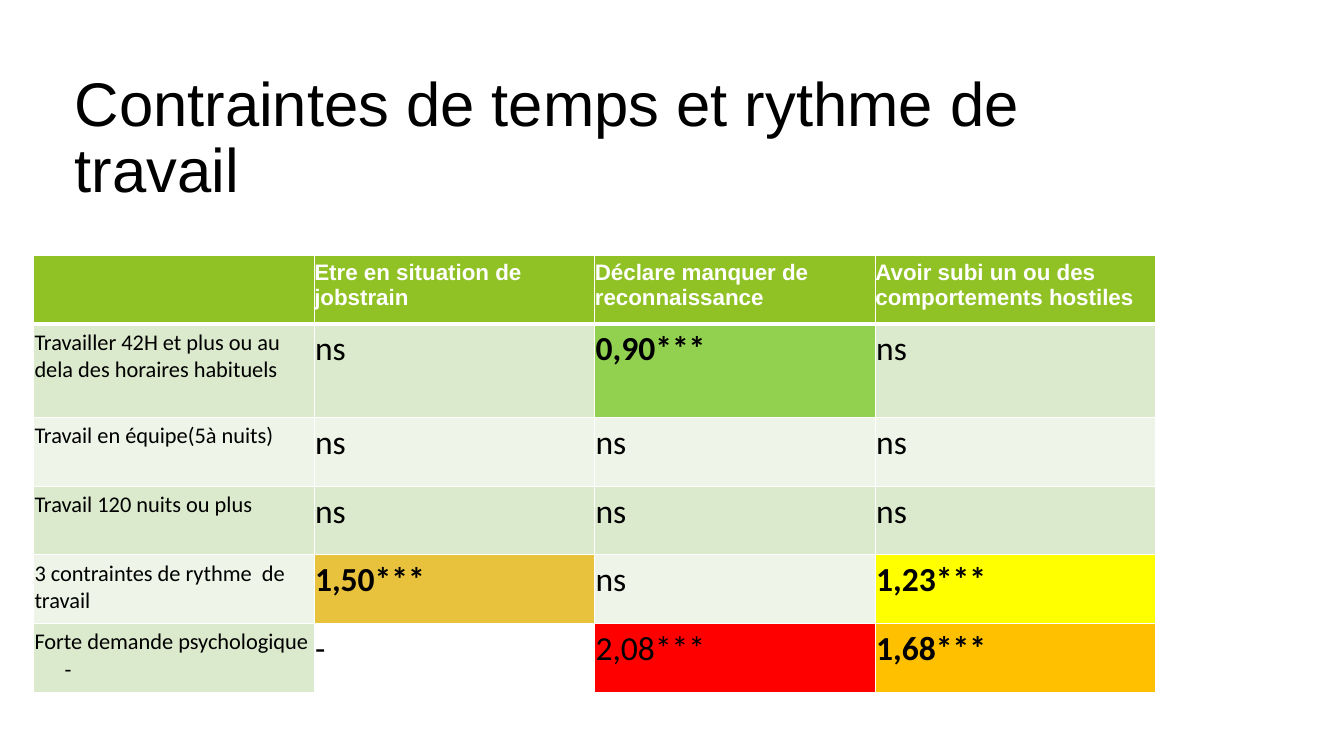
from lxml.etree import SubElement
from pptx import Presentation
from pptx.dml.color import RGBColor
from pptx.enum.text import MSO_ANCHOR
from pptx.oxml import parse_xml
from pptx.oxml.ns import nsdecls, qn
from pptx.util import Cm, Pt

BLACK = RGBColor(0x00, 0x00, 0x00)
WHITE = RGBColor(0xFF, 0xFF, 0xFF)
HEADER_GREEN = RGBColor(0x90, 0xC2, 0x26)
BAND_DARK = RGBColor(0xDB, 0xE9, 0xCC)
BAND_LIGHT = RGBColor(0xEE, 0xF4, 0xE7)
GREEN = RGBColor(0x92, 0xD0, 0x50)
GOLD = RGBColor(0xE6, 0xB9, 0x1E)
YELLOW = RGBColor(0xFF, 0xFF, 0x00)
RED = RGBColor(0xFF, 0x00, 0x00)
ORANGE = RGBColor(0xFF, 0xC0, 0x00)

ROWS = [
    ["", "Etre en situation de jobstrain", "Déclare manquer de reconnaissance",
     "Avoir subi un ou des comportements hostiles"],
    ["Travailler 42H et plus ou au dela des horaires habituels", "ns", "0,90***", "ns"],
    ["Travail en équipe(5à nuits)", "ns", "ns", "ns"],
    ["Travail 120 nuits ou plus", "ns", "ns", "ns"],
    ["3 contraintes de rythme  de travail", "1,50***", "ns", "1,23***"],
    ["Forte demande psychologique\n-", "-", "2,08***", "1,68***"],
]
HIGHLIGHTS = {(1, 2): GREEN, (4, 1): GOLD, (4, 3): YELLOW,
              (5, 1): WHITE, (5, 2): RED, (5, 3): ORANGE}
BOLD_VALUES = {(1, 2), (4, 1), (4, 3), (5, 3)}


def style_text(frame, name, size, color, bold=False):
    for para in frame.paragraphs:
        values = {"name": name, "size": Pt(size), "bold": bold}
        for key, value in values.items():
            setattr(para.font, key, value)
        para.font.color.rgb = color
        for span in para.runs:
            for key, value in values.items():
                setattr(span.font, key, value)
            span.font.color.rgb = color


def set_borders(cell, widths):
    properties = cell._tc.get_or_add_tcPr()
    for index, (side, width) in enumerate(widths.items()):
        properties.insert(index, parse_xml(
            f'<a:ln{side} {nsdecls("a")} w="{Pt(width)}"><a:solidFill>'
            f'<a:srgbClr val="{WHITE}"/></a:solidFill></a:ln{side}>'))


deck = Presentation()
deck.slide_width = Cm(33.87)
deck.slide_height = Cm(19.05)
page = deck.slides.add_slide(deck.slide_layouts[6])

title = page.shapes.add_textbox(Cm(1.88), Cm(1.83), Cm(23.88), Cm(3.38)).text_frame
title_format = {"word_wrap": True, "vertical_anchor": MSO_ANCHOR.MIDDLE,
                "margin_left": 0, "margin_right": 0, "margin_top": 0, "margin_bottom": 0}
for key, value in title_format.items():
    setattr(title, key, value)
title.text = "Contraintes de temps et rythme de travail"
title.paragraphs[0].line_spacing = 0.9
style_text(title, "Arial", 44, BLACK)

table = page.shapes.add_table(len(ROWS), 4, Cm(0.85), Cm(6.43), Cm(28.28), Cm(11)).table
for column in table.columns:
    column.width = Cm(7.07)
for row in table.rows:
    row.height = Cm(1.73)
table.rows[1].height = Cm(2.36)

for row_number, texts in enumerate(ROWS):
    header = row_number == 0
    band = HEADER_GREEN if header else BAND_DARK if row_number % 2 else BAND_LIGHT
    side_margin = Cm(0 if header else 0.02)
    for column_number, text in enumerate(texts):
        place = (row_number, column_number)
        cell = table.cell(*place)
        cell.text = text
        cell_format = {"margin_left": side_margin, "margin_right": side_margin,
                       "margin_top": Cm(0.13), "margin_bottom": Cm(0.13),
                       "vertical_anchor": MSO_ANCHOR.TOP}
        for key, value in cell_format.items():
            setattr(cell, key, value)
        if header:
            style_text(cell.text_frame, "Arial", 16, WHITE, True)
        else:
            style_text(cell.text_frame, "Calibri", 24 if column_number else 16,
                       BLACK, place in BOLD_VALUES)
        cell.fill.solid()
        cell.fill.fore_color.rgb = HIGHLIGHTS.get(place, band)
        set_borders(cell, {"L": 0.96, "R": 0.96,
                           "T": 3 if row_number == 1 else 0.96,
                           "B": 3 if header else 0.96})

gold_fill = table.cell(4, 1)._tc.tcPr.find(qn("a:solidFill"))
SubElement(gold_fill[0], qn("a:alpha"), val="86000")
dash = table.cell(5, 0).text_frame.paragraphs[1]
dash._p.get_or_add_pPr().set("marL", str(Cm(0.76)))

deck.save("out.pptx")
